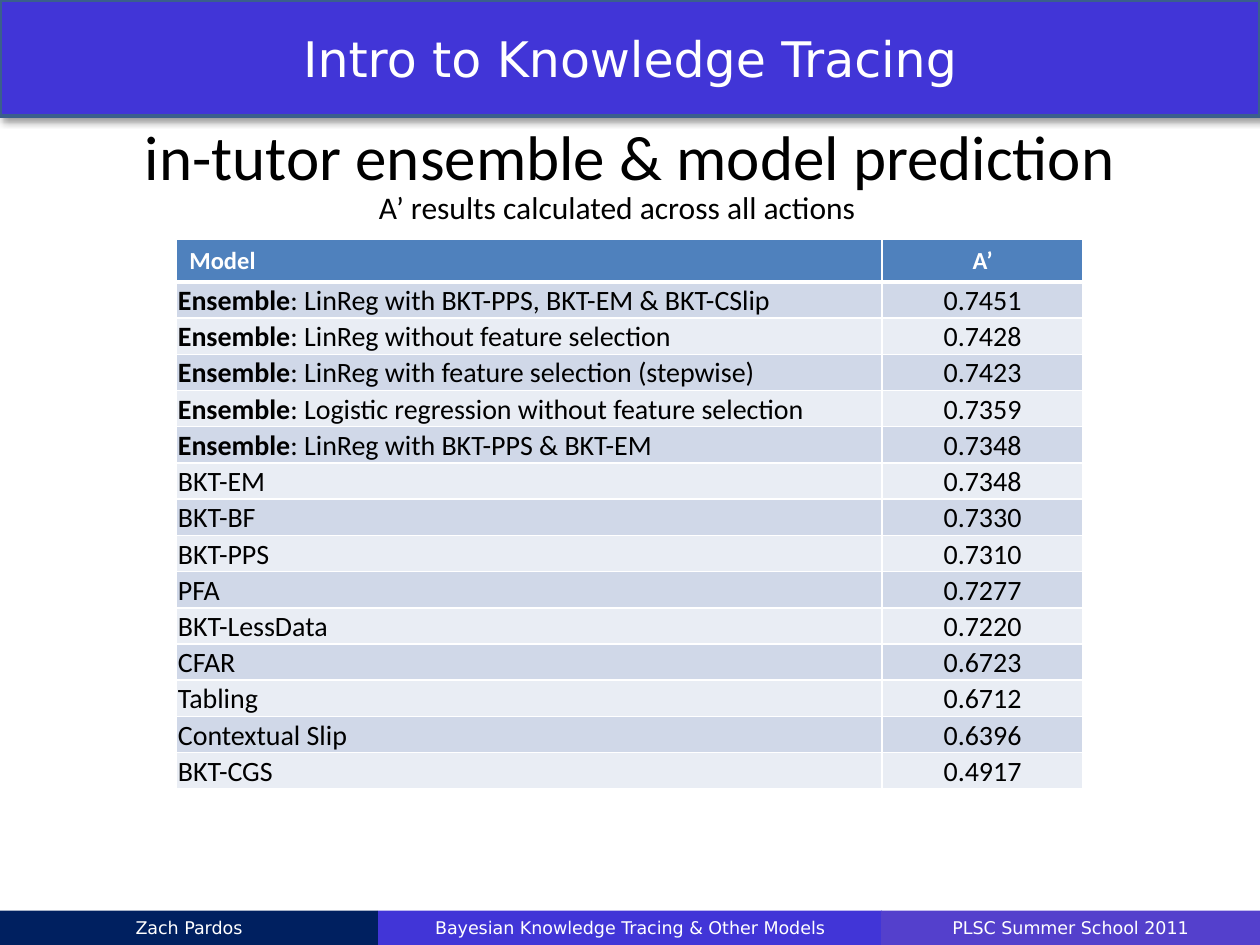
from lxml.etree import SubElement
from pptx import Presentation
from pptx.dml.color import RGBColor
from pptx.enum.shapes import MSO_SHAPE
from pptx.enum.text import MSO_ANCHOR, PP_ALIGN
from pptx.oxml import parse_xml
from pptx.oxml.ns import nsdecls, qn
from pptx.util import Pt

WHITE = RGBColor(0xFF, 0xFF, 0xFF)
BLACK = RGBColor(0, 0, 0)
INDIGO = RGBColor(0x41, 0x35, 0xD7)
VIOLET = RGBColor(0x54, 0x40, 0xCC)
NAVY = RGBColor(0x00, 0x20, 0x60)
BANNER_EDGE = RGBColor(0x3A, 0x5F, 0x8C)
HEADER_BLUE = RGBColor(0x4F, 0x81, 0xBD)
BAND_COLOURS = [RGBColor(0xD0, 0xD8, 0xE8), RGBColor(0xE9, 0xED, 0xF4)]

RESULTS = [
    ("Ensemble", ": LinReg with BKT-PPS, BKT-EM & BKT-CSlip", "0.7451"),
    ("Ensemble", ": LinReg without feature selection", "0.7428"),
    ("Ensemble", ": LinReg with feature selection (stepwise)", "0.7423"),
    ("Ensemble", ": Logistic regression without feature selection", "0.7359"),
    ("Ensemble", ": LinReg with BKT-PPS & BKT-EM", "0.7348"),
    ("", "BKT-EM", "0.7348"),
    ("", "BKT-BF", "0.7330"),
    ("", "BKT-PPS", "0.7310"),
    ("", "PFA", "0.7277"),
    ("", "BKT-LessData", "0.7220"),
    ("", "CFAR", "0.6723"),
    ("", "Tabling", "0.6712"),
    ("", "Contextual Slip", "0.6396"),
    ("", "BKT-CGS", "0.4917"),
]


def write(frame, text, size, colour=BLACK, font="Calibri", bold=False, align=PP_ALIGN.LEFT):
    """Append a run to the frame's first paragraph."""
    paragraph = frame.paragraphs[0]
    paragraph.alignment = align
    run = paragraph.add_run()
    run.text = text
    run.font.name = font
    run.font.size = Pt(size)
    run.font.bold = bold
    run.font.color.rgb = colour


def add_panel(left, top, width, height, fill):
    panel = slide.shapes.add_shape(
        MSO_SHAPE.RECTANGLE, Pt(left), Pt(top), Pt(width), Pt(height))
    panel.shadow.inherit = False
    panel.fill.solid()
    panel.fill.fore_color.rgb = fill
    panel.line.fill.background()
    panel.text_frame.word_wrap = True
    panel.text_frame.vertical_anchor = MSO_ANCHOR.MIDDLE
    return panel


prs = Presentation()
prs.slide_width, prs.slide_height = Pt(720), Pt(540)
slide = prs.slides.add_slide(prs.slide_layouts[6])

# Title, with its line set near the bottom of the panel
title = add_panel(0, 10.8, 720, 108.7, WHITE).text_frame
title.vertical_anchor = MSO_ANCHOR.BOTTOM
title.margin_bottom = Pt(9)
write(title, "in-tutor ensemble & model prediction", 36, align=PP_ALIGN.CENTER)

# Table of results
table = slide.shapes.add_table(
    len(RESULTS) + 1, 2, Pt(101), Pt(136.8), Pt(518), Pt(314)).table
for column, width in zip(table.columns, (403, 115)):
    column.width = Pt(width)
for row in table.rows:
    row.height = Pt(20.7)

for column, (heading, align) in enumerate([("Model", PP_ALIGN.LEFT), ("A’", PP_ALIGN.CENTER)]):
    write(table.cell(0, column).text_frame, heading, 14, colour=WHITE, bold=True, align=align)

for row, (kind, model, score) in enumerate(RESULTS, start=1):
    model_cell, score_cell = table.cell(row, 0), table.cell(row, 1)
    if kind:
        write(model_cell.text_frame, kind, 16, bold=True)
    write(model_cell.text_frame, model, 16)
    write(score_cell.text_frame, score, 16, align=PP_ALIGN.CENTER)
    for cell in (model_cell, score_cell):
        cell.vertical_anchor = MSO_ANCHOR.BOTTOM
        cell.margin_left = cell.margin_right = cell.margin_top = Pt(0.7)
        cell.margin_bottom = Pt(0)

for row_index, row in enumerate(table.rows):
    for cell in row.cells:
        properties = cell._tc.get_or_add_tcPr()
        for side in ("lnL", "lnR", "lnT", "lnB"):
            # The rule between header and body is heavier
            heavy = (row_index, side) in [(0, "lnB"), (1, "lnT")]
            border = SubElement(properties, qn(f"a:{side}"), w=str(Pt(3 if heavy else 1)))
            SubElement(SubElement(border, qn("a:solidFill")), qn("a:srgbClr"), val=str(WHITE))
        cell.fill.solid()
        cell.fill.fore_color.rgb = BAND_COLOURS[(row_index - 1) % 2] if row_index else HEADER_BLUE

# Subtitle
subtitle = slide.shapes.add_textbox(Pt(209.5), Pt(103.7), Pt(318), Pt(29)).text_frame
subtitle.word_wrap = False
write(subtitle, "A’ results calculated across all actions", 18)

# Banner
banner = add_panel(0, 0, 720, 66.2, INDIGO)
banner.line.color.rgb = BANNER_EDGE
banner.line.width = Pt(2)
effects = banner._element.spPr.find(qn("a:effectLst"))
effects.append(parse_xml(
    f'<a:outerShdw {nsdecls("a")} blurRad="{Pt(4)}" dist="{Pt(3)}" dir="2700000" '
    'algn="tl" rotWithShape="0">'
    '<a:srgbClr val="000000"><a:alpha val="40000"/></a:srgbClr></a:outerShdw>'))
write(banner.text_frame, "Intro to Knowledge Tracing", 28, colour=WHITE,
      font="DejaVu Sans", align=PP_ALIGN.CENTER)

# Footer
for left, width, fill, label in [
    (216, 288, INDIGO, "Bayesian Knowledge Tracing & Other Models"),
    (503.5, 216.5, VIOLET, "PLSC Summer School 2011"),
    (0, 216, NAVY, "Zach Pardos"),
]:
    footer = add_panel(left, 520.3, width, 19.7, fill)
    write(footer.text_frame, label, 10, colour=WHITE,
          font="DejaVu Sans", align=PP_ALIGN.CENTER)

prs.save("out.pptx")
